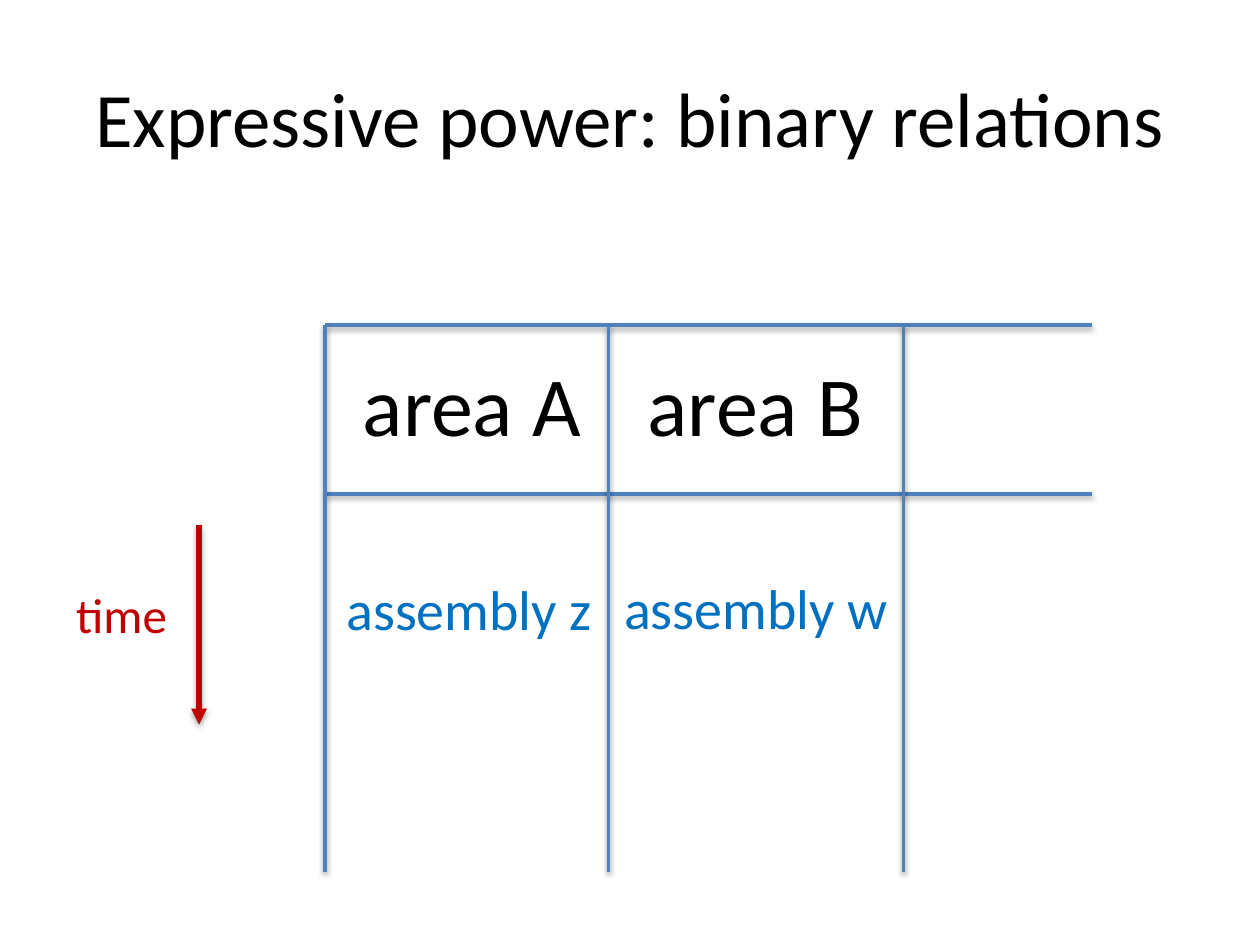
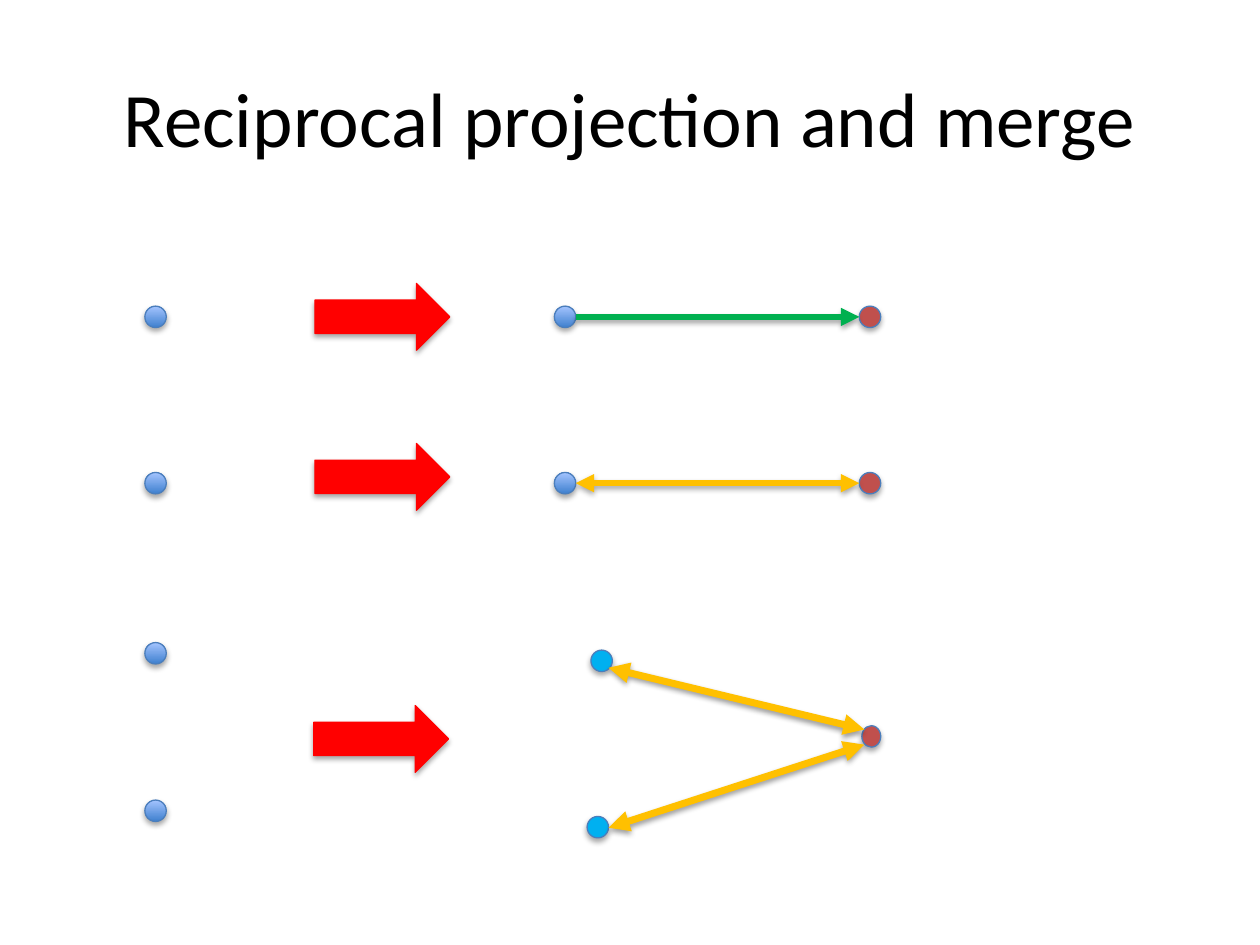
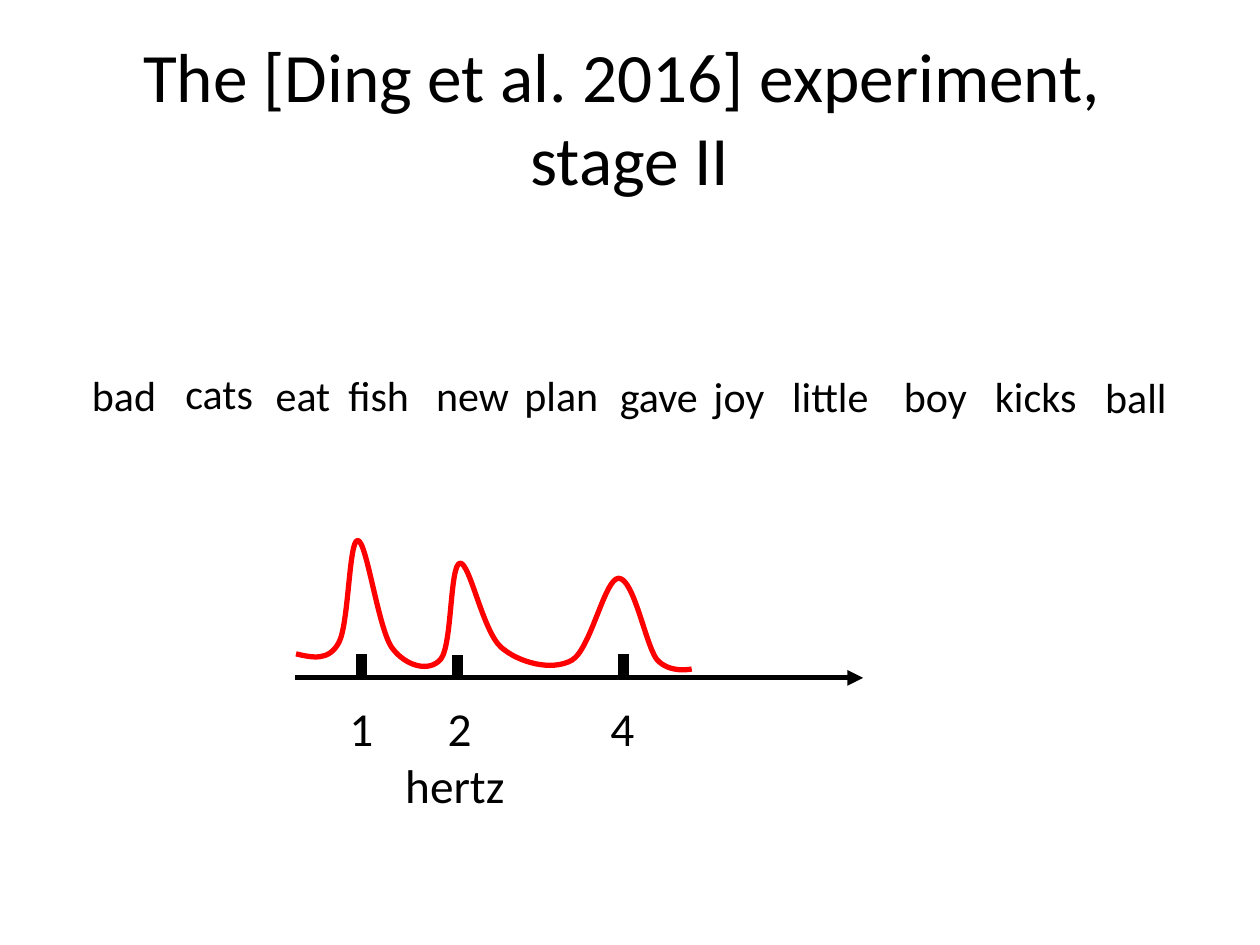
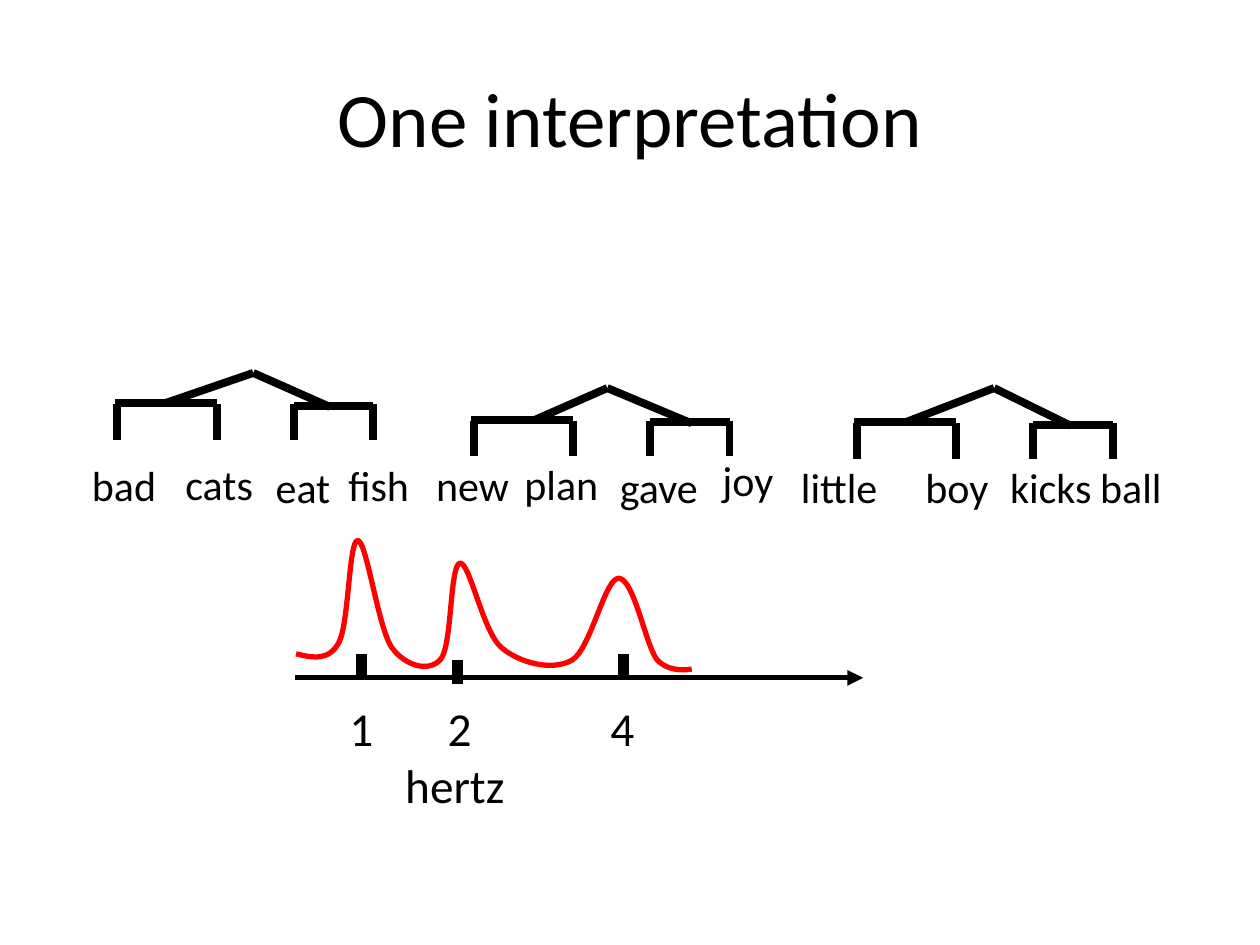
from lxml.etree import SubElement
from pptx import Presentation
from pptx.dml.color import RGBColor
from pptx.enum.shapes import MSO_CONNECTOR, MSO_SHAPE as Preset
from pptx.enum.text import MSO_ANCHOR, MSO_AUTO_SIZE, PP_ALIGN
from pptx.oxml.ns import qn
from pptx.util import Emu, Pt

SCALE = 9144  # EMU per px, 100 px to the inch
FONT = "Calibri"
COLOURS = {
    "black": "000000", "grid": "4F81BD", "time": "C00000", "assembly": "0070C0",
    "outline": "4B7EBC", "ball_dark": "3F80CE", "ball_light": "A4C4FF",
    "brick": "C0504D", "sky": "00B0F0", "green": "00B050", "amber": "FFC000",
    "red": "FF0000",
}
# opacity in thousandths of a percent, distance in EMU
SHADOWS = {"line": (38000, 20000), "shape": (35000, 23000)}

WORD_WIDTHS = {
    "bad": 75, "cats": 76, "eat": 65, "fish": 69, "new": 80, "plan": 79,
    "gave": 86, "joy": 61, "little": 82, "boy": 73, "kicks": 88, "ball": 71,
}
SPECTRUM = [
    (235, 519),
    (248, 522), (261, 525), (269, 510), (277, 495), (277, 428), (284, 429),
    (291, 429), (300, 498), (311, 514), (322, 529), (341, 534), (350, 523),
    (359, 511), (357, 449), (365, 447), (373, 446), (383, 501), (398, 514),
    (412, 526), (438, 533), (454, 524), (469, 515), (480, 459), (491, 459),
    (503, 459), (512, 510), (521, 523), (531, 535), (549, 531), (549, 531),
]


def px(length):
    return Emu(length * SCALE)


def rgb(name):
    return RGBColor.from_string(COLOURS[name])


class Deck:
    """Holds the shared style and the slide being built."""

    def __init__(self):
        self.presentation = Presentation()
        self.presentation.slide_width = px(1000)
        self.presentation.slide_height = px(750)
        self.slide = None

    def new_slide(self, title, size=44):
        layout = self.presentation.slide_layouts.get_by_name("Title Only")
        self.slide = self.presentation.slides.add_slide(layout)
        shape = self.slide.shapes.title
        shape.left, shape.top, shape.width, shape.height = map(px, (50, 30, 900, 125))
        frame = shape.text_frame
        frame.text = title
        frame.auto_size = MSO_AUTO_SIZE.NONE
        frame.vertical_anchor = MSO_ANCHOR.MIDDLE
        self.format(frame.paragraphs[0], size)

    def format(self, paragraph, size, colour="black", align=PP_ALIGN.CENTER):
        paragraph.alignment = align
        paragraph.font.name = FONT
        paragraph.font.size = Pt(size)
        paragraph.font.color.rgb = rgb(colour)

    def text(self, text, left, top, width, height, size, colour="black", wrap=False):
        shape = self.slide.shapes.add_textbox(*map(px, (left, top, width, height)))
        frame = shape.text_frame
        frame.text = text
        frame.word_wrap = wrap
        frame.auto_size = MSO_AUTO_SIZE.SHAPE_TO_FIT_TEXT
        for paragraph in frame.paragraphs:
            self.format(paragraph, size, colour)
        return frame

    def shadow(self, shape, kind):
        """Add the shadow of this kind, or an empty effect list for None."""
        effects = SubElement(shape._element.spPr, qn("a:effectLst"))
        if kind:
            opacity, distance = SHADOWS[kind]
            outer = SubElement(effects, qn("a:outerShdw"), blurRad="40000",
                               dist=str(distance), dir="5400000", rotWithShape="0")
            colour = SubElement(outer, qn("a:srgbClr"), val=COLOURS["black"])
            SubElement(colour, qn("a:alpha"), val=str(opacity))

    def line(self, start, end, colour, weight, arrows=(), shadow=None):
        """Draw a line; arrows may name "headEnd" (start) and "tailEnd" (end)."""
        connector = self.slide.shapes.add_connector(
            MSO_CONNECTOR.STRAIGHT, *map(px, (*start, *end)))
        connector.line.color.rgb = rgb(colour)
        connector.line.width = Pt(weight)
        for arrow in arrows:
            SubElement(connector.line._get_or_add_ln(), qn(f"a:{arrow}"), type="triangle")
        self.shadow(connector, shadow)

    def shape(self, preset, left, top, width, height, fill, outline):
        shape = self.slide.shapes.add_shape(preset, *map(px, (left, top, width, height)))
        if isinstance(fill, tuple):
            shape.fill.gradient()
            shape.fill.gradient_angle = 90
            for stop, colour in zip(shape.fill.gradient_stops, fill):
                stop.color.rgb = rgb(colour)
        else:
            shape.fill.solid()
            shape.fill.fore_color.rgb = rgb(fill)
        shape.line.color.rgb = rgb(outline)
        shape.line.width = Pt(0.75)
        self.shadow(shape, "shape")

    def dot(self, left, top, fill=("ball_dark", "ball_light"), width=17):
        self.shape(Preset.OVAL, left, top, width, 17, fill, "outline")

    def block_arrow(self, left, top):
        self.shape(Preset.RIGHT_ARROW, left, top, 107, 53, "red", "red")

    def curve(self, points, colour, weight):
        """Draw cubic curves: a start point, then three points per curve."""
        builder = self.slide.shapes.build_freeform(*points[0], scale=SCALE)
        builder.add_line_segments(points[1:], close=False)
        shape = builder.convert_to_shape()
        segments = list(shape._element.iter(qn("a:lnTo")))
        for first, second, third in zip(*[iter(segments)] * 3):
            first.tag = qn("a:cubicBezTo")
            for segment in (second, third):
                first.append(segment[0])
                segment.getparent().remove(segment)
        shape.fill.background()
        shape.line.color.rgb = rgb(colour)
        shape.line.width = Pt(weight)
        shape.shadow.inherit = False

    def words(self, lefts, tops):
        for (word, width), left, top in zip(WORD_WIDTHS.items(), lefts, tops):
            self.text(word, left, top, width, 50, 24)

    def frequency_plot(self, second_tick_top):
        self.line((234, 538), (685, 538), "black", 3, ["tailEnd"])
        frame = self.text("\t1\t2\t4\nhertz", 167, 550, 388, 101, 27, wrap=True)
        numbers = frame.paragraphs[0]
        numbers.alignment = PP_ALIGN.LEFT
        stops = SubElement(numbers._p.get_or_add_pPr(), qn("a:tabLst"))
        numbers._p.pPr.insert(0, stops)  # tab stops come before font defaults
        for position in (110, 188, 317):
            SubElement(stops, qn("a:tab"), pos=str(px(position)), algn="ctr")
        for x, top in ((495, 519), (287, 519), (363, second_tick_top)):
            self.line((x, top), (x, top + 19), "black", 6)
        self.curve(SPECTRUM, "red", 3)

    def tree(self, left, top, apex, left_join, right_join):
        """Draw two brackets over four words, joined at the apex."""
        legs = [left + offset for offset in (0, 79, 140, 203)]
        strokes = [((x, top), (x, top + 28)) for x in legs]
        strokes += [
            ((legs[1], top - 1), (left - 2, top - 1)),
            ((legs[3], top + 1), (legs[2], top + 1)),
            (apex, (right_join, top + 2)),
            (apex, (left_join, top - 1)),
        ]
        for start, end in strokes:
            self.line(start, end, "black", 4.5)


def binary_relations(deck):
    deck.new_slide("Expressive power: binary relations")
    # Open grid
    for y in (258, 392):
        deck.line((258, y), (867, y), "grid", 2, shadow="line")
    for x in (258, 483, 717):
        deck.line((x, 258), (x, 692), "grid", 2, shadow="line")
    # Time axis and labels
    deck.line((158, 417), (158, 575), "time", 3, ["tailEnd"], "line")
    deck.text("area A", 277, 275, 195, 91, 48)
    deck.text("area B", 503, 275, 193, 91, 48)
    deck.text("time", 50, 459, 93, 57, 28, "time")
    deck.text("assembly z", 264, 451, 217, 64, 32, "assembly")
    deck.text("assembly w", 484, 450, 232, 64, 32, "assembly")


def projection_and_merge(deck):
    deck.new_slide("Reciprocal projection and merge")
    both = ["headEnd", "tailEnd"]
    # Projection, one way and reciprocal
    rows = ((243, 225, "green", ["tailEnd"]), (375, 352, "amber", both))
    for top, arrow_top, colour, arrows in rows:
        deck.dot(115, top)
        deck.block_arrow(250, arrow_top)
        deck.dot(440, top)
        deck.dot(682, top, "brick")
        deck.line((457, top + 8.5), (682, top + 8.5), colour, 3.5, arrows, "shape")
    # Merge
    for top in (510, 635):
        deck.dot(115, top)
    deck.block_arrow(249, 560)
    deck.dot(684, 576, "brick", width=15)
    deck.dot(469, 516, "sky")
    deck.dot(466, 648, "sky")
    deck.line((686, 579), (483, 530), "amber", 4, both, "line")
    deck.line((686, 591), (483, 657), "amber", 4, both, "line")


def experiment(deck):
    deck.new_slide("The [Ding et al. 2016] experiment, \vstage II", 39.6)
    deck.words((61, 136, 208, 266, 335, 406, 480, 556, 618, 706, 778, 866),
               (288, 287, 288, 288, 288, 288, 289, 289, 289, 289, 289, 290))
    deck.frequency_plot(520)


def interpretation(deck):
    deck.new_slide("One interpretation")
    deck.words((61, 136, 208, 266, 335, 406, 480, 563, 625, 723, 790, 862),
               (360, 359, 361, 360, 360, 359, 361, 356, 361, 361, 361, 361))
    deck.frequency_plot(524)
    # Phrase trees
    deck.tree(93, 321, (201, 296), 131, 262)
    deck.tree(376, 334, (482, 308), 425, 549)
    deck.tree(680, 336, (789, 308), 719, 850)


def main():
    deck = Deck()
    for build in (binary_relations, projection_and_merge, experiment, interpretation):
        build(deck)
    deck.presentation.save("out.pptx")


if __name__ == "__main__":
    main()
